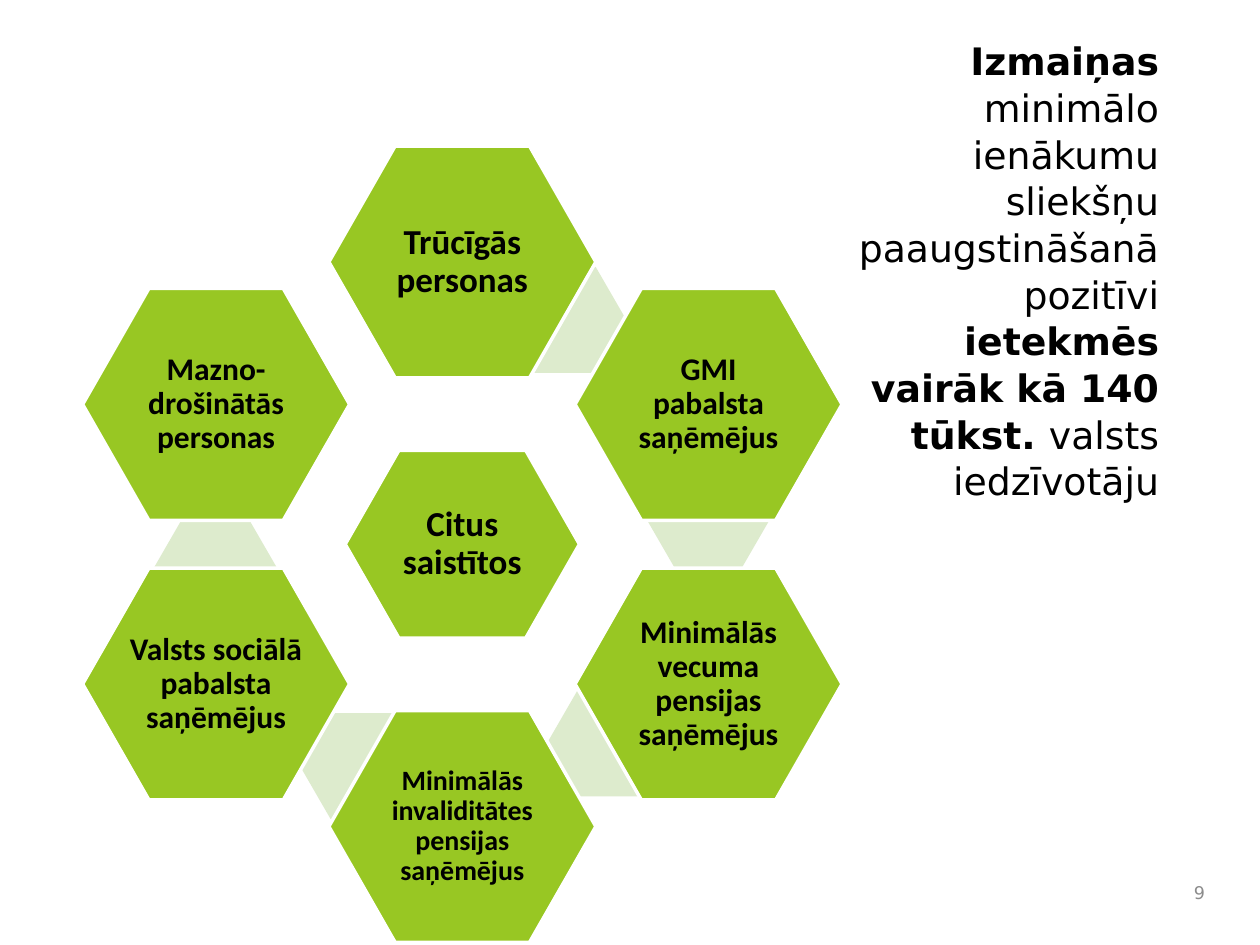
"""Build a slide with a ring of beneficiary groups around a central hexagon."""
from typing import NamedTuple, Optional

from pptx import Presentation
from pptx.dml.color import RGBColor
from pptx.enum.shapes import MSO_SHAPE
from pptx.enum.text import MSO_ANCHOR, MSO_AUTO_SIZE, PP_ALIGN
from pptx.util import Pt

GREEN = RGBColor(0x98, 0xC7, 0x23)
PALE_GREEN = RGBColor(0xDD, 0xEB, 0xCD)
WHITE = RGBColor(0xFF, 0xFF, 0xFF)
BLACK = RGBColor(0x00, 0x00, 0x00)
GRAY = RGBColor(0x8C, 0x8C, 0x8C)

CENTER_X, CENTER_Y = 264.2, 311
SIDE_X, SIDE_Y, POLE_Y = 140.7, 79.9, 161.3
RING_SIZE = (152.6, 132.5)
CORE_SIZE = (133.9, 107.3)
BRIDGE_SIZE = (70.6, 60.5)


class Bridge(NamedTuple):
    left: float
    top: float


class Group(NamedTuple):
    label: str
    offset_x: float
    offset_y: float
    font_size: float
    bridge: Optional[Bridge] = None
    size: tuple[float, float] = RING_SIZE


GROUPS = [
    Group("Citus saistītos", 0, 0, 20, size=CORE_SIZE),
    Group("Trūcīgās personas", 0, -POLE_Y, 20, Bridge(287.3, 152.6)),
    Group("GMI pabalsta saņēmējus", SIDE_X, -SIDE_Y, 18, Bridge(369.4, 266.4)),
    Group("Minimālās vecuma pensijas saņēmējus", SIDE_X, SIDE_Y, 18, Bridge(312.5, 394.6)),
    Group("Minimālās invaliditātes pensijas saņēmējus", 0, POLE_Y, 16, Bridge(171.4, 407.5)),
    Group("Valsts sociālā pabalsta saņēmējus", -SIDE_X, SIDE_Y, 18, Bridge(87.8, 294.5)),
    Group("Mazno-drošinātās personas", -SIDE_X, -SIDE_Y, 18),
]

TITLE_SPANS = [
    ("Izmaiņas ", True),
    ("minimālo ienākumu sliekšņu paaugstināšanā pozitīvi ", False),
    ("ietekmēs vairāk kā 140 tūkst. ", True),
    ("valsts iedzīvotāju", False),
]


def add_span(para, text: str, font_name: str, size: float, color: RGBColor, bold: bool) -> None:
    """Append one formatted run to a paragraph."""
    span = para.add_run()
    span.text = text
    span.font.name = font_name
    span.font.size = Pt(size)
    span.font.bold = bold
    span.font.color.rgb = color


def add_hexagon(page, left: float, top: float, size: tuple[float, float],
                fill: RGBColor, adjustment: float):
    """Add a borderless hexagon and return it."""
    width, height = size
    hexagon = page.shapes.add_shape(MSO_SHAPE.HEXAGON, Pt(left), Pt(top), Pt(width), Pt(height))
    hexagon.adjustments[0] = adjustment
    hexagon.shadow.inherit = False
    hexagon.fill.solid()
    hexagon.fill.fore_color.rgb = fill
    hexagon.line.fill.background()
    return hexagon


def add_group(page, group: Group) -> None:
    """Draw a group's bridge, then its labelled hexagon."""
    if group.bridge:
        add_hexagon(page, group.bridge.left, group.bridge.top, BRIDGE_SIZE, PALE_GREEN, 0.289)
    width, height = group.size
    left = CENTER_X + group.offset_x - width / 2
    top = CENTER_Y + group.offset_y - height / 2
    hexagon = add_hexagon(page, left, top, group.size, GREEN, 0.286)
    hexagon.line.color.rgb = WHITE
    hexagon.line.width = Pt(2)
    frame = hexagon.text_frame
    frame.word_wrap = True
    frame.vertical_anchor = MSO_ANCHOR.MIDDLE
    frame.margin_left = frame.margin_right = frame.margin_top = frame.margin_bottom = Pt(1.5)
    para = frame.paragraphs[0]
    para.alignment = PP_ALIGN.CENTER
    para.line_spacing = 0.9
    add_span(para, group.label, "Calibri", group.font_size, BLACK, True)


def format_title(page) -> None:
    """Place the title at the upper right and fill in its runs."""
    title = page.shapes.title
    title.left, title.top, title.width, title.height = Pt(478.8), Pt(17.3), Pt(190.8), Pt(81.4)
    frame = title.text_frame
    frame.word_wrap = True
    frame.auto_size = MSO_AUTO_SIZE.NONE
    frame.vertical_anchor = MSO_ANCHOR.TOP
    para = frame.paragraphs[0]
    para.alignment = PP_ALIGN.RIGHT
    para.line_spacing = 1.03
    for text, bold in TITLE_SPANS:
        add_span(para, text, "DejaVu Sans", 21.6, BLACK, bold)


def add_page_number(page, number: str) -> None:
    """Add the page number at the lower right."""
    box = page.shapes.add_textbox(Pt(671.8), Pt(498.2), Pt(23.8), Pt(23.8))
    frame = box.text_frame
    frame.word_wrap = True
    frame.vertical_anchor = MSO_ANCHOR.MIDDLE
    para = frame.paragraphs[0]
    para.alignment = PP_ALIGN.RIGHT
    add_span(para, number, "DejaVu Sans", 10, GRAY, False)


def main() -> None:
    """Create and save the deck."""
    deck = Presentation()
    deck.slide_width, deck.slide_height = Pt(720), Pt(540)
    page = deck.slides.add_slide(deck.slide_layouts[5])
    format_title(page)
    add_page_number(page, "9")
    for group in GROUPS:
        add_group(page, group)
    deck.save("out.pptx")


if __name__ == "__main__":
    main()
